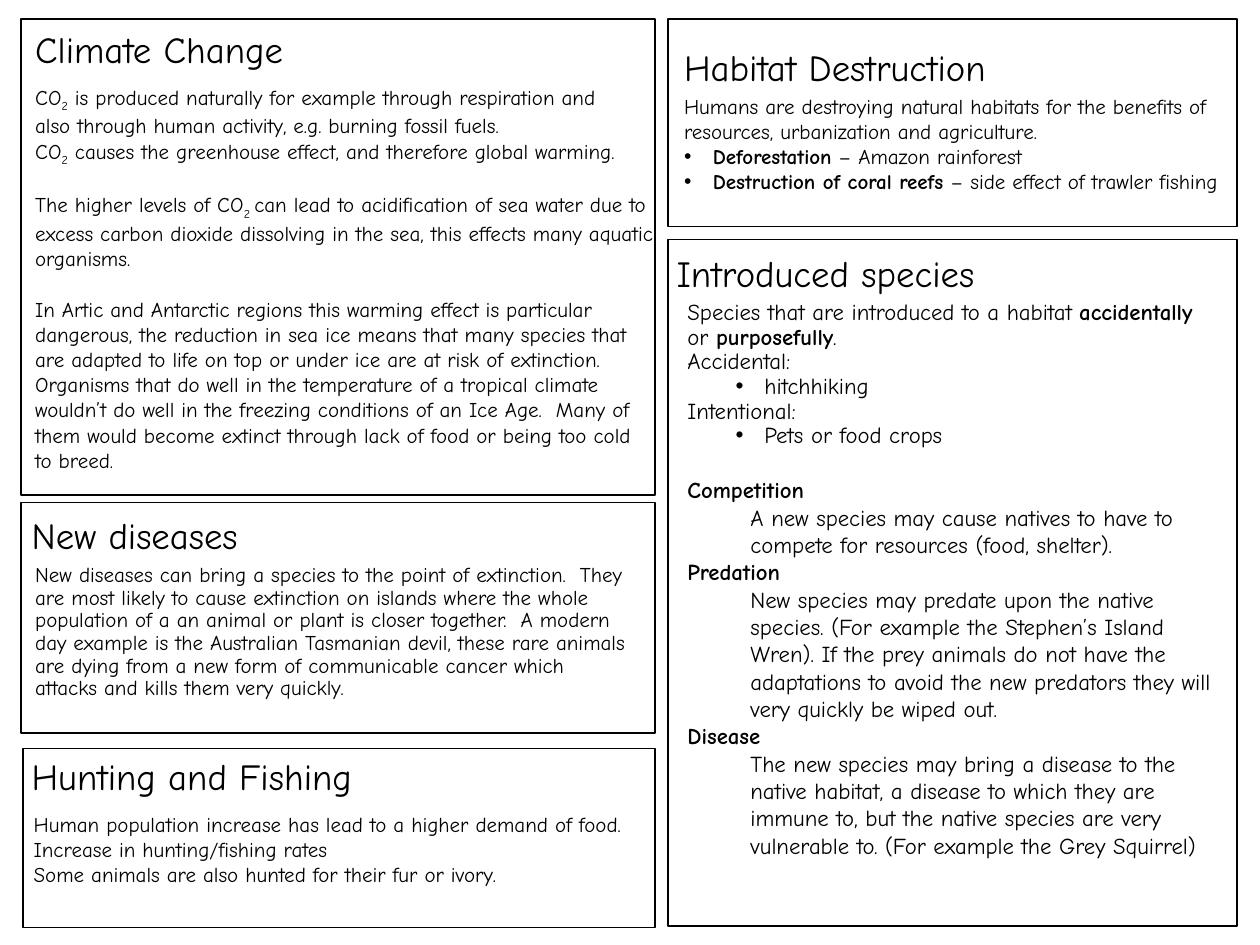
from lxml import etree
from pptx import Presentation
from pptx.dml.color import RGBColor
from pptx.enum.shapes import MSO_SHAPE
from pptx.enum.text import MSO_ANCHOR
from pptx.oxml.ns import qn
from pptx.util import Cm, Pt

RECTANGLE = MSO_SHAPE.RECTANGLE
TOP, MIDDLE = MSO_ANCHOR.TOP, MSO_ANCHOR.MIDDLE
FONT, INK = "Comic Neue", "000000"
WIDE, NARROW = (0.25, 0.13), (0.18, 0.1)
BOLD, SUB = "bold", "sub"

TIGHT = {"spacing": 0.9}
BULLET = {"left": 0.58, "hang": 0.58, "bullet": "•"}
SUB_BULLET = {"left": 1.55, "hang": 0.58, "bullet": "•", "level": 1, **TIGHT}
DETAIL = {"left": 1.27, "level": 1}
GAP_12, GAP_13 = {"before": 14.4}, {"before": 15.6}

PANELS = [
    {
        "frame": (0.43, 0.38, 12.78, 9.6),
        "title": "Climate Change",
        "title_box": (0.46, 0.3, 14.27, 1.5),
        "title_format": {"inset": WIDE, "spacing": 0.9},
        "body_box": (0.46, 1.57, 12.98, 8.46),
        "size": 12,
        "body": [
            (["CO", ("2", SUB), " is produced naturally for example through respiration and"], {}),
            (["also through human activity, e.g. burning fossil fuels."], {}),
            (["CO", ("2", SUB), " causes the greenhouse effect, and therefore global warming."], {}),
            (["The higher levels of CO", ("2 ", SUB),
              "can lead to acidification of sea water due to excess carbon dioxide "
              "dissolving in the sea, this effects many aquatic organisms."], GAP_12),
            (["In Artic and Antarctic regions this warming effect is particular dangerous, "
              "the reduction in sea ice means that many species that are adapted to life on "
              "top or under ice are at risk of extinction.  Organisms that do well in the "
              "temperature of a tropical climate wouldn’t do well in the freezing conditions "
              "of an Ice Age.  Many of them would become extinct through lack of food or "
              "being too cold to breed."], GAP_12),
        ],
    },
    {
        "frame": (0.43, 10.13, 12.78, 4.65),
        "title": "New diseases",
        "title_box": (0.46, 10.03, 14.27, 1.5),
        "body_box": (0.46, 11.25, 12.45, 3.48),
        "size": 12,
        "body": [
            (["New diseases can bring a species to the point of extinction.  They are most "
              "likely to cause extinction on islands where the whole population of a an "
              "animal or plant is closer together.  A modern day example is the Australian "
              "Tasmanian devil, these rare animals are dying from a new form of communicable "
              "cancer which attacks and kills them very quickly."], TIGHT),
        ],
    },
    {
        "frame": (0.46, 15.09, 12.75, 3.61),
        "title": "Hunting and Fishing",
        "title_box": (0.46, 14.86, 14.27, 1.57),
        "body_box": (0.43, 16.23, 12.47, 2.31),
        "size": 12,
        "body": [
            (["Human population increase has lead to a higher demand of food."], {}),
            (["Increase in hunting/fishing rates"], {}),
            (["Some animals are also hunted for their fur or ivory."], {}),
        ],
    },
    {
        "frame": (13.46, 0.38, 11.48, 4.19),
        "title": "Habitat Destruction",
        "title_box": (13.61, 0.38, 11.3, 1.93),
        "body_box": (13.54, 1.75, 11.38, 2.82),
        "size": 12,
        "body": [
            (["Humans are destroying natural habitats for the benefits of resources, "
              "urbanization and agriculture."], {}),
            ([("Deforestation", BOLD), " – Amazon rainforest"], BULLET),
            ([("Destruction of coral reefs", BOLD), " – side effect of trawler fishing"], BULLET),
        ],
    },
    {
        "frame": (13.46, 4.83, 11.48, 13.84),
        "title": "Introduced species",
        "title_box": (13.46, 4.83, 11.35, 1.35),
        "body_box": (13.61, 5.94, 11.1, 12.65),
        "size": 13,
        "body": [
            (["Species that are introduced to a habitat ", ("accidentally", BOLD), " or ",
              ("purposefully", BOLD), "."], TIGHT),
            (["Accidental:"], TIGHT),
            (["hitchhiking"], SUB_BULLET),
            (["Intentional:"], TIGHT),
            (["Pets or food crops"], SUB_BULLET),
            ([("Competition", BOLD)], GAP_13),
            (["A new species may cause natives to have to compete for resources "
              "(food, shelter)."], DETAIL),
            ([("Predation", BOLD)], {}),
            (["New species may predate upon the native species. (For example the Stephen’s "
              "Island Wren). If the prey animals do not have the adaptations to avoid the "
              "new predators they will very quickly be wiped out."], DETAIL),
            ([("Disease", BOLD)], {}),
            (["The new species may bring a disease to the native habitat, a disease to which "
              "they are immune to, but the native species are very vulnerable to. "
              "(For example the Grey Squirrel)"], DETAIL),
        ],
    },
]


def color(value):
    return RGBColor.from_string(value)


def format_paragraph(paragraph, left=0, hang=0, bullet=None, level=0, spacing=None, before=0):
    paragraph.level = level
    paragraph.space_before = Pt(before)
    if spacing:
        paragraph.line_spacing = spacing
    properties = paragraph._p.get_or_add_pPr()
    properties.set("marL", str(Cm(left)))
    properties.set("indent", str(-Cm(hang)))
    if bullet:
        etree.SubElement(properties, qn("a:buFont")).set("typeface", "Arial")
        etree.SubElement(properties, qn("a:buChar")).set("char", bullet)


def add_text(slide, paragraphs, box, size, inset=WIDE, anchor=TOP):
    frame = slide.shapes.add_textbox(*map(Cm, box)).text_frame
    frame.word_wrap = True
    frame.vertical_anchor = anchor
    frame.margin_left = frame.margin_right = Cm(inset[0])
    frame.margin_top = frame.margin_bottom = Cm(inset[1])
    for index, (pieces, layout) in enumerate(paragraphs):
        paragraph = frame.add_paragraph() if index else frame.paragraphs[0]
        format_paragraph(paragraph, **layout)
        for piece in pieces:
            words, style = (piece, None) if isinstance(piece, str) else piece
            run = paragraph.add_run()
            run.text = words
            run.font.name = FONT
            run.font.size = Pt(size)
            run.font.color.rgb = color(INK)
            run.font.bold = style == BOLD
            if style == SUB:
                run.font._element.set("baseline", "-25000")


def add_frame(slide, box):
    border = slide.shapes.add_shape(RECTANGLE, *map(Cm, box))
    border.shadow.inherit = False
    border.fill.background()
    border.line.color.rgb = color(INK)
    border.line.width = Pt(1)


def main():
    deck = Presentation()
    deck.slide_width, deck.slide_height = Cm(25.4), Cm(19.05)
    slide = deck.slides.add_slide(deck.slide_layouts[6])
    for panel in PANELS:
        heading = {"inset": NARROW, "spacing": 1.0, **panel.get("title_format", {})}
        add_frame(slide, panel["frame"])
        add_text(slide, [([panel["title"]], {"spacing": heading["spacing"]})],
                 panel["title_box"], 21, inset=heading["inset"], anchor=MIDDLE)
        add_text(slide, panel["body"], panel["body_box"], panel["size"])
    deck.save("out.pptx")


if __name__ == "__main__":
    main()
